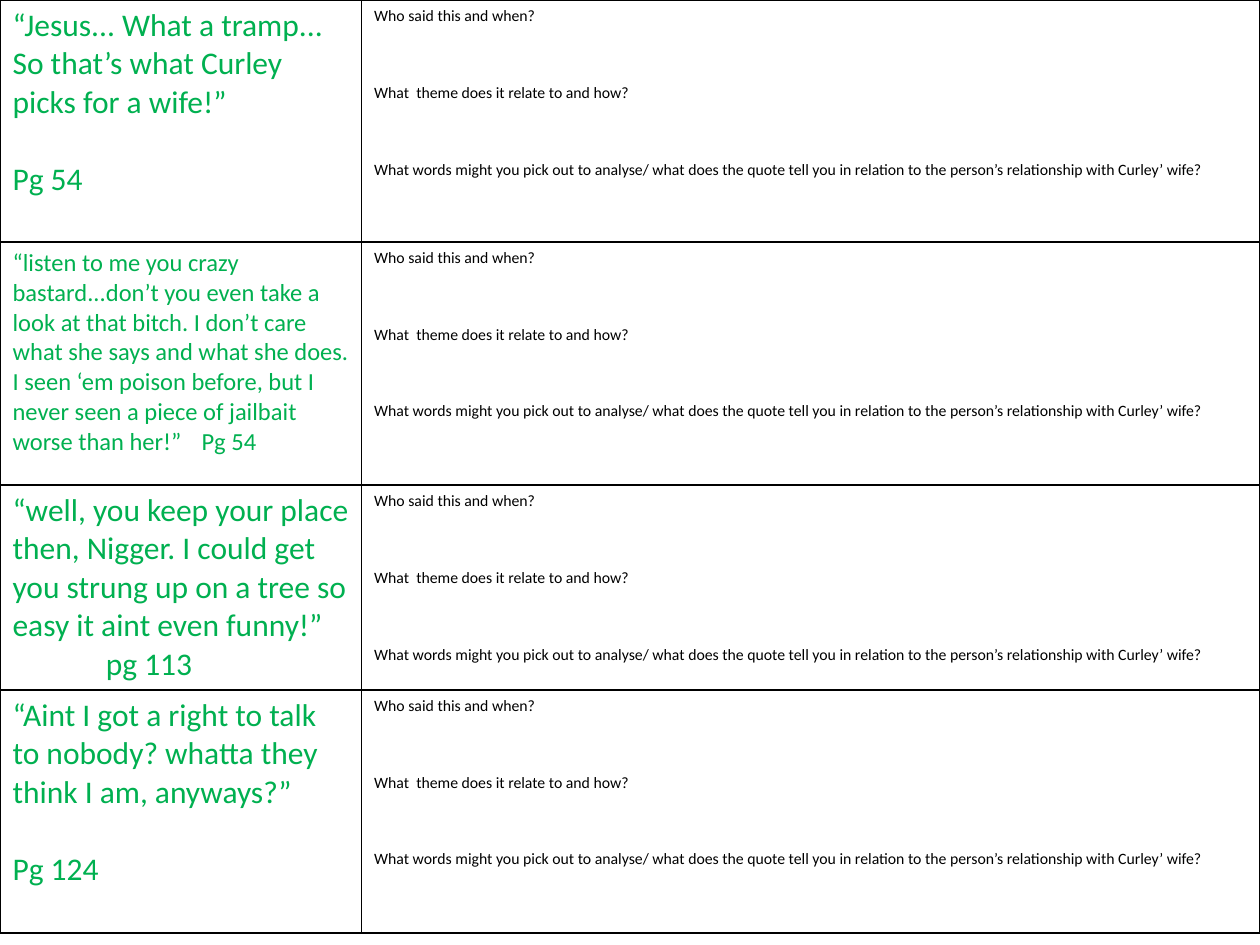
from dataclasses import dataclass

import lxml.etree
import pptx
import pptx.dml.color
import pptx.oxml.ns
import pptx.util
from pptx.util import Inches


@dataclass(frozen=True)
class Theme:
    font: str = "Calibri"
    quote: str = "00B050"
    ink: str = "000000"
    paper: str = "FFFFFF"
    large: int = 18
    medium: int = 14
    small: int = 9
    border: float = 1


@dataclass(frozen=True)
class Line:
    text: str
    before: float = 0
    indent: float = 0


@dataclass(frozen=True)
class Quote:
    lines: tuple[Line, ...]
    size: int
    height: float


THEME = Theme()
COLUMNS = (2.87, 7.13)
QUESTION_GAP = 33
PAGE_GAP = 22
QUESTIONS = (
    Line("Who said this and when?"),
    Line("What  theme does it relate to and how?", QUESTION_GAP),
    Line("What words might you pick out to analyse/ what does the quote tell you "
         "in relation to the person’s relationship with Curley’ wife?", QUESTION_GAP),
)
QUOTES = (
    Quote((Line("“Jesus... What a tramp... So that’s what Curley picks for a wife!”"),
           Line("Pg 54", PAGE_GAP)), THEME.large, 1.92),
    Quote((Line("“listen to me you crazy bastard...don’t you even take a look at that "
                "bitch. I don’t care what she says and what she does. I seen ‘em poison "
                "before, but I never seen a piece of jailbait worse than her!”\tPg 54"),),
          THEME.medium, 1.93),
    Quote((Line("“well, you keep your place then, Nigger. I could get you strung up on "
                "a tree so easy it aint even funny!”"),
           Line("pg 113", indent=0.74)), THEME.large, 1.62),
    Quote((Line("“Aint I got a right to talk to nobody? whatta they think I am, anyways?”"),
           Line("Pg 124", PAGE_GAP)), THEME.large, 1.93),
)


def rgb(value: str) -> pptx.dml.color.RGBColor:
    return pptx.dml.color.RGBColor.from_string(value)


def draw_borders(cell) -> None:
    qn = pptx.oxml.ns.qn
    tc_pr = cell._tc.get_or_add_tcPr()
    for side in ("lnL", "lnR", "lnT", "lnB"):
        ln = lxml.etree.SubElement(tc_pr, qn(f"a:{side}"),
                                   w=str(pptx.util.Pt(THEME.border)))
        fill = lxml.etree.SubElement(ln, qn("a:solidFill"))
        lxml.etree.SubElement(fill, qn("a:srgbClr"), val=THEME.ink)


def fill_cell(cell, lines: tuple[Line, ...], size: int, color: str) -> None:
    draw_borders(cell)
    cell.fill.solid()
    cell.fill.fore_color.rgb = rgb(THEME.paper)
    tf = cell.text_frame
    font_format = {"name": THEME.font, "size": pptx.util.Pt(size), "bold": False}
    for i, line in enumerate(lines):
        p = tf.paragraphs[0] if i == 0 else tf.add_paragraph()
        if line.before:
            p.space_before = pptx.util.Pt(line.before)
        if line.indent:
            p._p.get_or_add_pPr().set("marL", str(Inches(line.indent)))
        r = p.add_run()
        r.text = line.text
        for name, value in font_format.items():
            setattr(r.font, name, value)
        r.font.color.rgb = rgb(color)


def draw_worksheet(s, quotes: tuple[Quote, ...]) -> None:
    height = sum(q.height for q in quotes)
    table = s.shapes.add_table(len(quotes), len(COLUMNS), Inches(0), Inches(0),
                               Inches(sum(COLUMNS)), Inches(height)).table
    for name, value in {"first_row": False, "horz_banding": False}.items():
        setattr(table, name, value)
    for column, width in zip(table.columns, COLUMNS):
        column.width = Inches(width)
    for i, quote in enumerate(quotes):
        table.rows[i].height = Inches(quote.height)
        fill_cell(table.cell(i, 0), quote.lines, quote.size, THEME.quote)
        fill_cell(table.cell(i, 1), QUESTIONS, THEME.small, THEME.ink)


def main() -> None:
    prs = pptx.Presentation()
    prs.slide_width, prs.slide_height = Inches(10), Inches(7.5)
    s = prs.slides.add_slide(prs.slide_layouts[6])
    draw_worksheet(s, QUOTES)
    prs.save("out.pptx")


if __name__ == "__main__":
    main()
